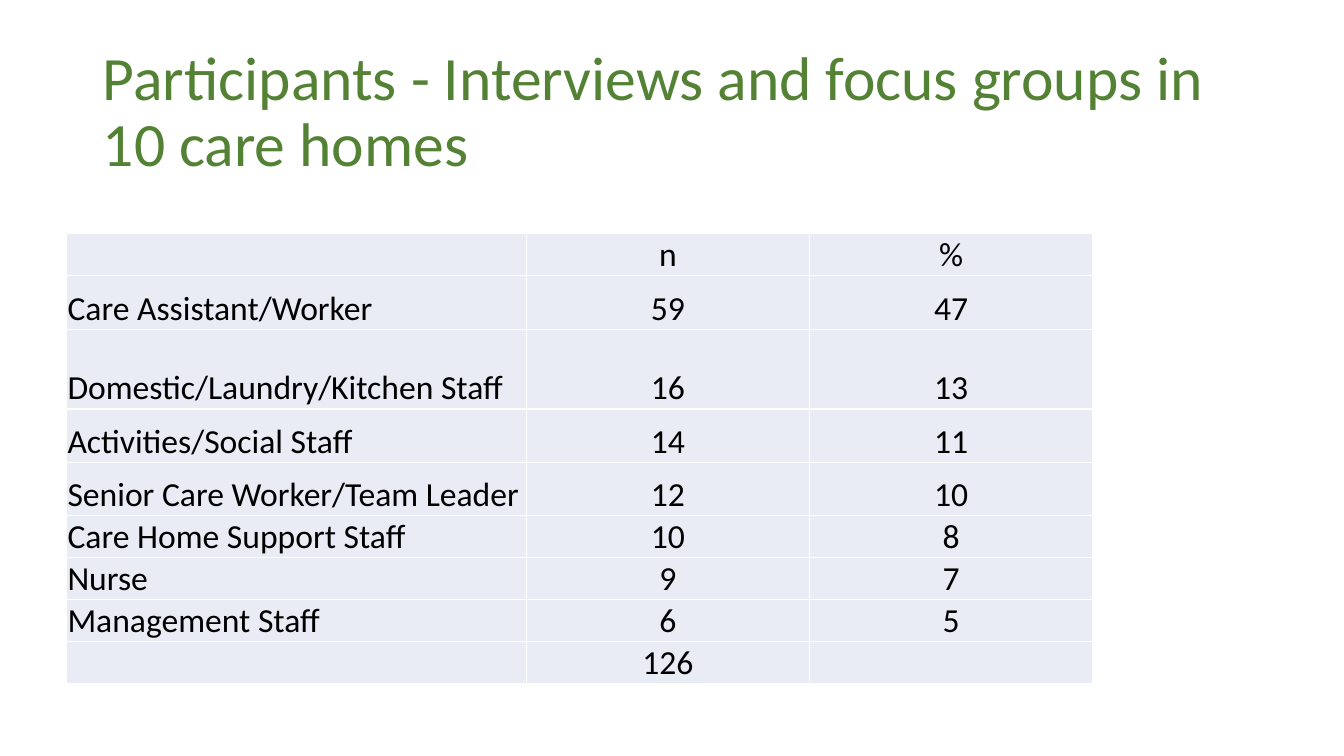
from dataclasses import dataclass

import lxml.etree
import pptx
import pptx.dml.color
import pptx.enum.text
import pptx.oxml.ns
import pptx.table
import pptx.text.text
import pptx.util

Inches = pptx.util.Inches
Align = pptx.enum.text.PP_ALIGN
Anchor = pptx.enum.text.MSO_ANCHOR
qn = pptx.oxml.ns.qn

COLORS = {"title": "548235", "text": "000000", "cell": "E9EBF5", "border": "FFFFFF"}
FONT = "Calibri"
COLUMN_WIDTHS = (4.56, 2.81, 2.81)


@dataclass(frozen=True)
class StaffRow:
    role: str
    count: str
    percent: str
    height: float = 0.41


STAFF_ROWS = (
    StaffRow("", "n", "%"),
    StaffRow("Care Assistant/Worker", "59", "47", 0.53),
    StaffRow("Domestic/Laundry/Kitchen Staff", "16", "13", 0.79),
    StaffRow("Activities/Social Staff", "14", "11", 0.53),
    StaffRow("Senior Care Worker/Team Leader", "12", "10", 0.53),
    StaffRow("Care Home Support Staff", "10", "8"),
    StaffRow("Nurse", "9", "7"),
    StaffRow("Management Staff", "6", "5"),
    StaffRow("", "126", ""),
)


def color(name: str) -> pptx.dml.color.RGBColor:
    return pptx.dml.color.RGBColor.from_string(COLORS[name])


def format_paragraph(
    para: pptx.text.text._Paragraph, size: int, color_name: str, align: Align
) -> None:
    para.alignment = align
    para.font.name = FONT
    para.font.size = pptx.util.Pt(size)
    para.font.color.rgb = color(color_name)


def add_borders(cell: pptx.table._Cell) -> None:
    properties = cell._tc.get_or_add_tcPr()
    for side in ("lnL", "lnR", "lnT", "lnB"):
        line = lxml.etree.SubElement(
            properties, qn(f"a:{side}"), w=str(pptx.util.Pt(1))
        )
        fill = lxml.etree.SubElement(line, qn("a:solidFill"))
        lxml.etree.SubElement(fill, qn("a:srgbClr"), val=COLORS["border"])


def fill_cell(cell: pptx.table._Cell, text: str, align: Align) -> None:
    add_borders(cell)
    cell.fill.solid()
    cell.fill.fore_color.rgb = color("cell")
    cell.vertical_anchor = Anchor.BOTTOM
    cell.margin_left = cell.margin_right = cell.margin_top = Inches(0.01)
    cell.margin_bottom = Inches(0)
    cell.text = text
    format_paragraph(cell.text_frame.paragraphs[0], 24, "text", align)


def add_title(page: pptx.slide.Slide, text: str) -> None:
    title = page.shapes.title
    title.left, title.top = Inches(0.92), Inches(0.4)
    title.width, title.height = Inches(11.5), Inches(1.45)
    frame = title.text_frame
    frame.text = text
    frame.word_wrap = True
    frame.auto_size = pptx.enum.text.MSO_AUTO_SIZE.NONE
    frame.vertical_anchor = Anchor.MIDDLE
    para = frame.paragraphs[0]
    para.line_spacing = 0.9
    format_paragraph(para, 44, "title", Align.LEFT)


def add_staff_table(page: pptx.slide.Slide) -> None:
    table = page.shapes.add_table(
        len(STAFF_ROWS),
        len(COLUMN_WIDTHS),
        Inches(0.66),
        Inches(2.32),
        Inches(sum(COLUMN_WIDTHS)),
        Inches(sum(staff.height for staff in STAFF_ROWS)),
    ).table
    table.first_row = False
    table.horz_banding = False
    for column, width in zip(table.columns, COLUMN_WIDTHS):
        column.width = Inches(width)
    for row, staff in zip(table.rows, STAFF_ROWS):
        row.height = Inches(staff.height)
        fill_cell(row.cells[0], staff.role, Align.LEFT)
        fill_cell(row.cells[1], staff.count, Align.CENTER)
        fill_cell(row.cells[2], staff.percent, Align.CENTER)


def main() -> None:
    deck = pptx.Presentation()
    deck.slide_width, deck.slide_height = Inches(13.33), Inches(7.5)
    page = deck.slides.add_slide(deck.slide_layouts.get_by_name("Title Only"))
    add_title(page, "Participants - Interviews and focus groups in 10 care homes")
    add_staff_table(page)
    deck.save("out.pptx")


if __name__ == "__main__":
    main()
